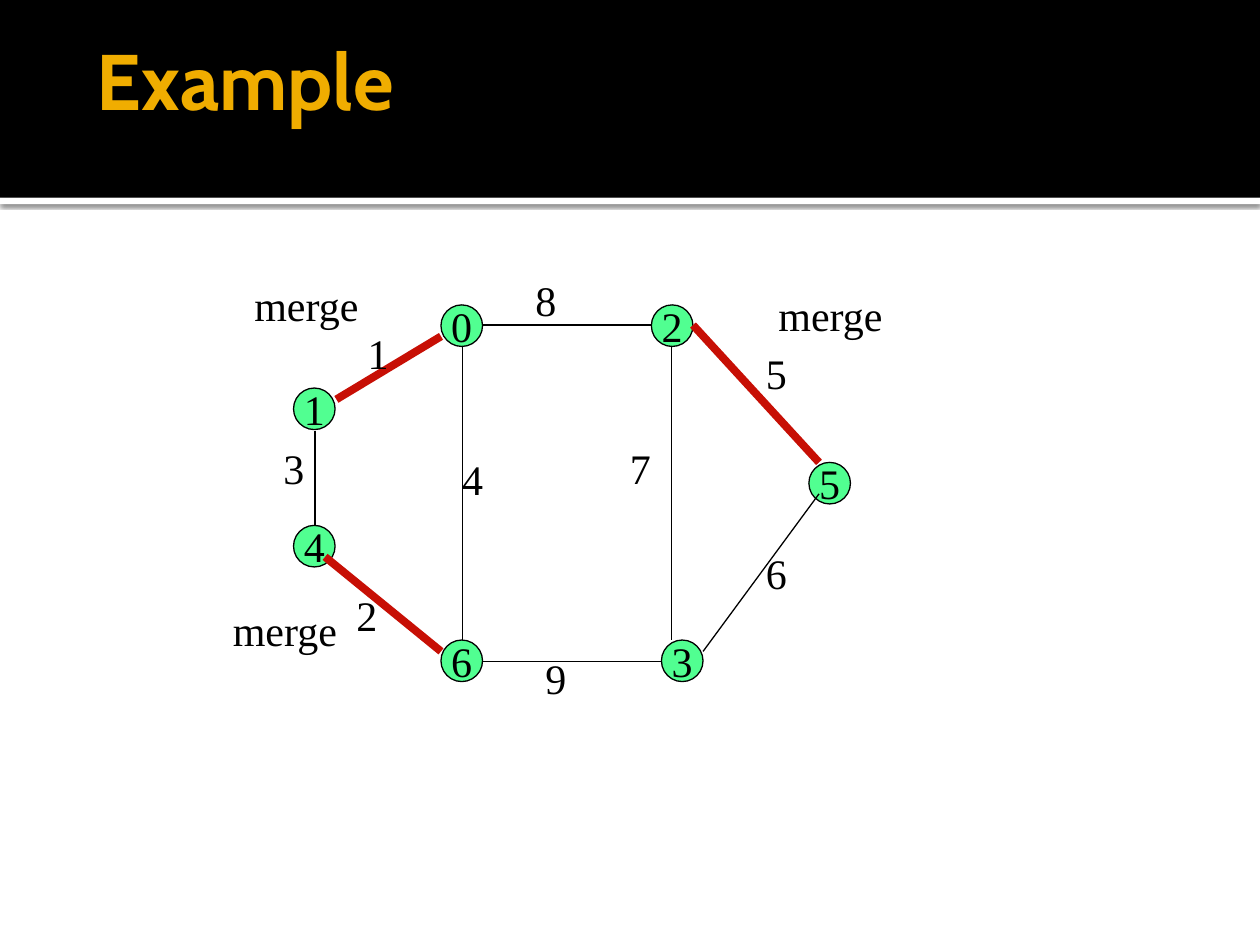
from lxml.etree import SubElement
from pptx import Presentation
from pptx.dml.color import RGBColor
from pptx.enum.shapes import MSO_CONNECTOR as Connector, MSO_SHAPE as Shape
from pptx.enum.text import MSO_ANCHOR as Anchor, MSO_AUTO_SIZE as AutoSize, PP_ALIGN as Align
from pptx.oxml.ns import qn
from pptx.util import Inches, Pt

BLACK, WHITE, GOLD, GREEN, RED = "000000", "FFFFFF", "F0AD00", "51FF91", "C70F05"
DIAMETER = 0.33
LABEL_HEIGHT = 0.5
WEIGHT_WIDTH, MERGE_WIDTH = 0.37, 1.03

NODES = [
    ("4", 2.33, 4.17), ("1", 2.33, 3.08), ("0", 3.5, 2.42), ("2", 5.17, 2.42),
    ("5", 6.42, 3.67), ("6", 3.5, 5.08), ("3", 5.25, 5.08),
]
MERGED_EDGES = [
    ((3.5, 2.67), (2.67, 3.17)),
    ((2.58, 4.42), (3.5, 5.17)),
    ((5.5, 2.58), (6.5, 3.67)),
]
OPEN_EDGES = [
    ((2.5, 3.42), (2.5, 4.17)),
    ((3.83, 2.58), (5.17, 2.58)),
    ((6.5, 3.92), (5.58, 5.17)),
    ((3.83, 5.25), (5.25, 5.25)),
    ((3.67, 2.75), (3.67, 5.08)),
    ((5.33, 2.75), (5.33, 5.08)),
]
WEIGHTS = [
    ("1", 2.82, 2.55), ("3", 2.15, 3.46), ("2", 2.73, 4.63),
    ("4", 3.57, 3.55), ("7", 4.9, 3.46), ("8", 4.15, 2.13),
    ("9", 4.23, 5.13), ("5", 5.98, 2.71), ("6", 5.98, 4.3),
]
MERGES = [("merge", 1.92, 2.17), ("merge", 6.08, 2.25), ("merge", 1.75, 4.75)]


def color(value):
    return RGBColor.from_string(value)


def write(shape, text, size=24, font="Times New Roman", fill=BLACK, bold=False,
          align=Align.LEFT, anchor=Anchor.TOP, wrap=False):
    frame = shape.text_frame
    frame.word_wrap = wrap
    frame.vertical_anchor = anchor
    para = frame.paragraphs[0]
    para.alignment = align
    span = para.add_run()
    span.text = text
    span.font.size = Pt(size)
    span.font.name = font
    span.font.bold = bold
    span.font.color.rgb = color(fill)
    return frame


def add_filled(page, kind, left, top, width, height, fill):
    shape = page.shapes.add_shape(kind, Inches(left), Inches(top), Inches(width), Inches(height))
    shape.shadow.inherit = False
    shape.fill.solid()
    shape.fill.fore_color.rgb = color(fill)
    shape.line.fill.background()
    return shape


def add_shadow(shape):
    effects = shape._element.spPr.find(qn("a:effectLst"))
    shadow = SubElement(effects, qn("a:outerShdw"), blurRad=str(Pt(2.5)), dist=str(Pt(0.8)),
                        dir="5400000", algn="tl", rotWithShape="0")
    tint = SubElement(shadow, qn("a:srgbClr"), val=BLACK)
    SubElement(tint, qn("a:alpha"), val="60000")


def add_header(page):
    add_shadow(add_filled(page, Shape.RECTANGLE, 0, 1.57, 10, 0.05, WHITE))
    add_filled(page, Shape.RECTANGLE, 0, 0, 10, 1.57, BLACK)
    box = page.shapes.add_textbox(Inches(0.67), 0, Inches(8.5), Inches(1.25))
    frame = write(box, "Example", size=45, font="Cabin", fill=GOLD, bold=True,
                  anchor=Anchor.MIDDLE, wrap=True)
    frame.margin_right = Inches(0.05)


def add_node(page, name, left, top):
    node = add_filled(page, Shape.OVAL, left, top, DIAMETER, DIAMETER, GREEN)
    node.line.color.rgb = color(BLACK)
    node.line.width = Pt(0.75)
    write(node, name, align=Align.CENTER, anchor=Anchor.MIDDLE)


def add_edge(page, start, end, stroke, width):
    points = [Inches(value) for value in start + end]
    edge = page.shapes.add_connector(Connector.STRAIGHT, *points)
    edge.line.color.rgb = color(stroke)
    edge.line.width = Pt(width)
    SubElement(edge._element.spPr, qn("a:effectLst"))


def add_label(page, text, left, top, width):
    box = page.shapes.add_textbox(Inches(left), Inches(top), Inches(width), Inches(LABEL_HEIGHT))
    write(box, text).auto_size = AutoSize.SHAPE_TO_FIT_TEXT


def main():
    """Build the slide of a weighted graph with its merged edges."""
    deck = Presentation()
    deck.slide_width, deck.slide_height = Inches(10), Inches(7.5)
    page = deck.slides.add_slide(deck.slide_layouts[6])
    add_header(page)
    for node in NODES:
        add_node(page, *node)
    for edges, stroke, width in ((MERGED_EDGES, RED, 4.5), (OPEN_EDGES, BLACK, 0.75)):
        for start, end in edges:
            add_edge(page, start, end, stroke, width)
    for labels, width in ((WEIGHTS, WEIGHT_WIDTH), (MERGES, MERGE_WIDTH)):
        for label in labels:
            add_label(page, *label, width)
    deck.save("out.pptx")


if __name__ == "__main__":
    main()
